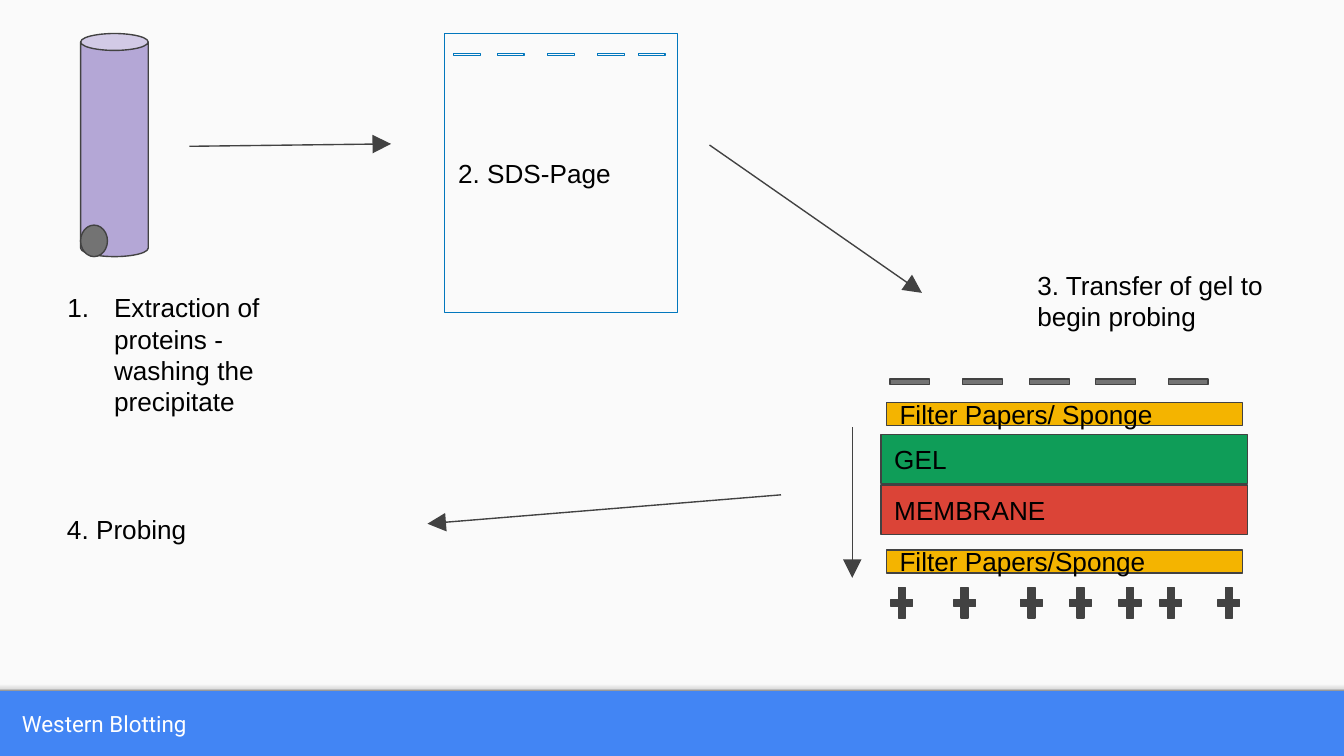
"""Build a slide that shows the four steps of a western blot."""
from lxml.etree import SubElement
from pptx import Presentation
from pptx.dml.color import RGBColor
from pptx.enum.shapes import MSO_CONNECTOR, MSO_SHAPE
from pptx.enum.text import MSO_ANCHOR, MSO_AUTO_SIZE, PP_ALIGN
from pptx.oxml.ns import qn
from pptx.util import Pt

WHITE = RGBColor(0xFF, 0xFF, 0xFF)
BLACK = RGBColor(0x00, 0x00, 0x00)
PAPER = RGBColor(0xFA, 0xFA, 0xFA)
BLUE = RGBColor(0x42, 0x85, 0xF4)
GEL_BLUE = RGBColor(0x02, 0x77, 0xBD)
PURPLE = RGBColor(0xB4, 0xA7, 0xD6)
DARK_GRAY = RGBColor(0x42, 0x42, 0x42)
GRAY = RGBColor(0x73, 0x73, 0x73)
GREEN = RGBColor(0x0F, 0x9D, 0x58)
RED = RGBColor(0xDB, 0x44, 0x37)
AMBER = RGBColor(0xF4, 0xB4, 0x00)


def write_text(shape, text, anchor, font="Arial", size=14, color=BLACK):
    frame = shape.text_frame
    frame.word_wrap = True
    frame.auto_size = MSO_AUTO_SIZE.NONE
    frame.vertical_anchor = anchor
    frame.margin_left = frame.margin_right = Pt(7.2)
    frame.margin_top = frame.margin_bottom = Pt(7.2)
    paragraph = frame.paragraphs[0]
    paragraph.alignment = PP_ALIGN.LEFT
    run = paragraph.add_run()
    run.text = text
    run.font.name = font
    run.font.size = Pt(size)
    run.font.color.rgb = color
    return paragraph


def add_shape(kind, left, top, width, height, fill, line=DARK_GRAY):
    shape = slide.shapes.add_shape(kind, Pt(left), Pt(top), Pt(width), Pt(height))
    shape.shadow.inherit = False
    shape.fill.solid()
    shape.fill.fore_color.rgb = fill
    if line is None:
        shape.line.fill.background()
    else:
        shape.line.color.rgb = line
        shape.line.width = Pt(0.75)
    return shape


presentation = Presentation()
presentation.slide_width = Pt(720)
presentation.slide_height = Pt(405)
slide = presentation.slides.add_slide(presentation.slide_layouts[5])
slide.background.fill.solid()
slide.background.fill.fore_color.rgb = BLUE

title = slide.shapes.title
title.left, title.top, title.width, title.height = Pt(4.5), Pt(370), Pt(660), Pt(35)
write_text(title, "Western Blotting", MSO_ANCHOR.MIDDLE, "Roboto", 12, WHITE)

add_shape(MSO_SHAPE.RECTANGLE, 0, 0, 720, 370, PAPER, None)
edge_shadow = add_shape(MSO_SHAPE.RECTANGLE, 0, 364.5, 720, 5.5, PAPER, None)
edge_shadow.fill.gradient()
edge_shadow.fill.gradient_angle = 270
stop_list = edge_shadow._element.spPr.find(qn("a:gradFill")).find(qn("a:gsLst"))
for stop in list(stop_list):
    stop_list.remove(stop)
for percent, color in [(0, "F9F9F9"), (36, "F9F9F9"), (80, "DEDEDE"), (100, "999999")]:
    stop = SubElement(stop_list, qn("a:gs"), pos=str(percent * 1000))
    SubElement(stop, qn("a:srgbClr"), val=color)

add_shape(MSO_SHAPE.CAN, 43.2, 18, 36.2, 119.5, PURPLE)
add_shape(MSO_SHAPE.OVAL, 43.2, 120.6, 14.4, 16.9, GRAY)

gel_sheet = add_shape(MSO_SHAPE.RECTANGLE, 238.3, 18, 124.6, 149.3, PAPER, GEL_BLUE)
write_text(gel_sheet, "2. SDS-Page", MSO_ANCHOR.MIDDLE)
for left in [243, 266.4, 293.4, 320.1, 342]:
    add_shape(MSO_SHAPE.RECTANGLE, left, 28.6, 14.4, 1.2, PAPER, GEL_BLUE)

for left in [475.2, 508.9, 544.7, 571, 597.5, 619.3, 650.4]:
    add_shape(MSO_SHAPE.MATH_PLUS, left, 311.8, 15.8, 22.3, DARK_GRAY)
for left in [473, 512, 547.9, 583.2, 622.3]:
    add_shape(MSO_SHAPE.MATH_MINUS, left, 198.5, 28.8, 12.2, GRAY)

for text, left, top, width, height, color in [
    ("GEL", 472, 232.8, 196.2, 26.4, GREEN),
    ("MEMBRANE", 472, 259.9, 196.2, 26.4, RED),
    ("Filter Papers/ Sponge", 474.8, 215.6, 190.7, 12.4, AMBER),
    ("Filter Papers/Sponge", 474.8, 294.6, 190.7, 12.4, AMBER),
]:
    layer = add_shape(MSO_SHAPE.RECTANGLE, left, top, width, height, color)
    write_text(layer, text, MSO_ANCHOR.MIDDLE)

for text, left, top, width, height, numbered in [
    ("Extraction of proteins - washing the precipitate", 18, 149, 128.2, 67, True),
    ("3. Transfer of gel to begin probing", 548.6, 137.2, 150.5, 39, False),
    ("4. Probing", 28.8, 267.8, 176.4, 67, False),
]:
    label = slide.shapes.add_textbox(Pt(left), Pt(top), Pt(width), Pt(height))
    paragraph = write_text(label, text, MSO_ANCHOR.TOP)
    if numbered:
        properties = paragraph._p.get_or_add_pPr()
        properties.set("marL", str(Pt(36)))
        properties.set("indent", str(Pt(-25)))
        SubElement(properties, qn("a:buFont"), typeface="Arial")
        SubElement(properties, qn("a:buAutoNum"), type="arabicPeriod")

for start_x, start_y, end_x, end_y in [
    (101.5, 78.4, 209.5, 77.1),
    (380.1, 77.7, 493.9, 156.9),
    (456.6, 229, 456.6, 309.6),
    (418.4, 265.1, 229, 280.6),
]:
    arrow = slide.shapes.add_connector(
        MSO_CONNECTOR.STRAIGHT, Pt(start_x), Pt(start_y), Pt(end_x), Pt(end_y)
    )
    arrow.line.color.rgb = DARK_GRAY
    arrow.line.width = Pt(0.75)
    SubElement(arrow.line._get_or_add_ln(), qn("a:tailEnd"), type="triangle", w="lg", len="lg")
    SubElement(arrow._element.spPr, qn("a:effectLst"))

presentation.save("out.pptx")
